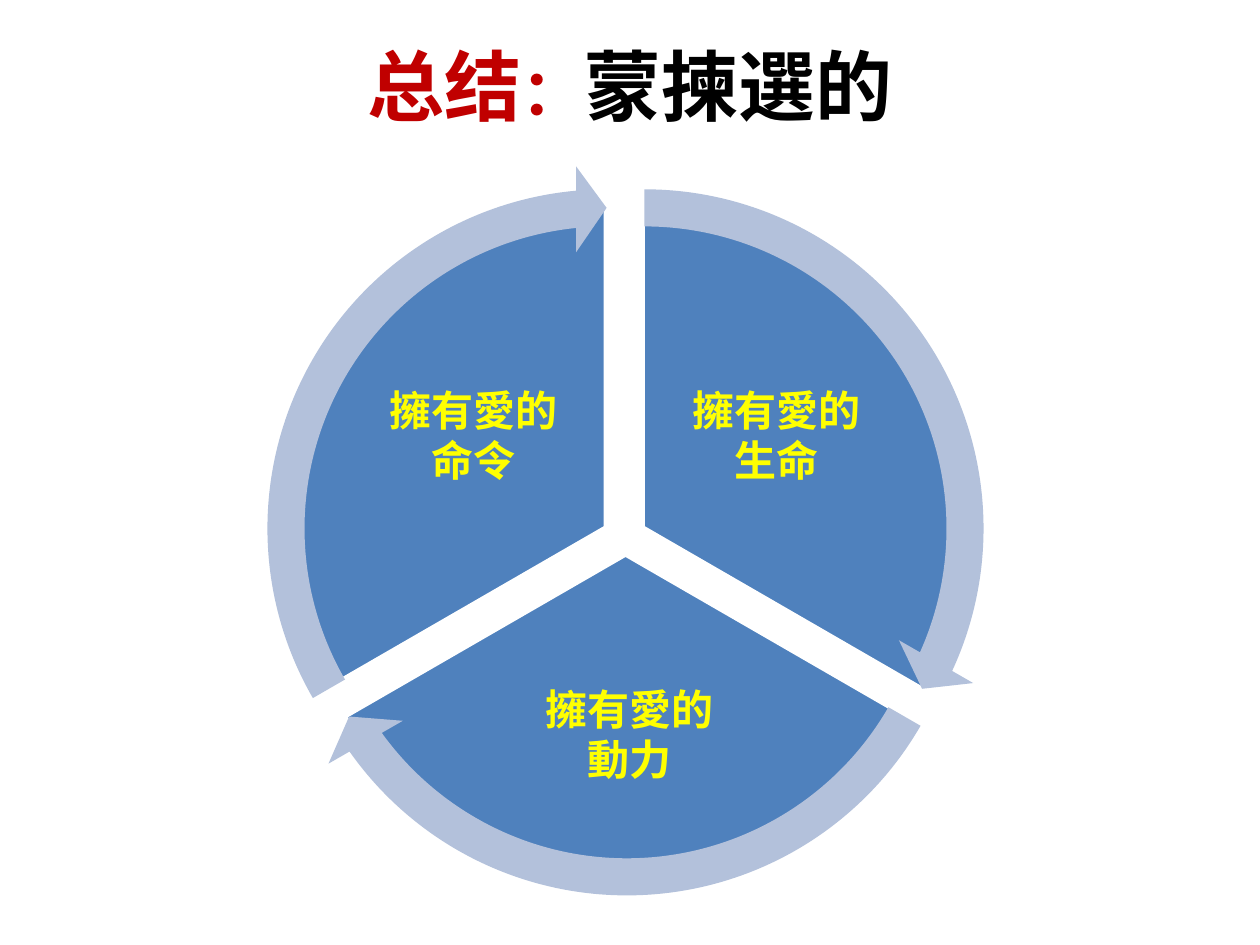
from dataclasses import dataclass

import pptx
import pptx.dml.color
import pptx.enum.shapes
import pptx.enum.text
import pptx.oxml.ns
import pptx.util
from pptx.util import Inches

FONT = "Noto Sans CJK SC"
COLORS = {
    "title_lead": "C00000",
    "title": "000000",
    "sector": "4F81BD",
    "gap": "FFFFFF",
    "label": "FFFF00",
    "arrow": "B3C1DB",
}
SECTOR_SIZE = 5.13
ARROW_SIZE = 5.77
ARROW_OFFSET = 0.31
HEAD_ANGLE = 3.275
ARROW_WIDTH = 0.051
HEAD_WIDTH = 0.059


@dataclass
class Sector:
    left: float
    top: float
    start: float
    end: float
    label: tuple[float, float, float, float]
    lines: tuple[str, str]


SECTORS = [
    Sector(2.54, 1.62, 162, 18, (5.25, 2.71, 1.83, 1.53), ("擁有愛的", "生命")),
    Sector(2.40, 1.84, 18, 90, (3.62, 5.18, 2.75, 1.34), ("擁有愛的", "動力")),
    Sector(2.24, 1.62, 90, 162, (2.84, 2.71, 1.83, 1.53), ("擁有愛的", "命令")),
]


def color(name: str) -> pptx.dml.color.RGBColor:
    return pptx.dml.color.RGBColor.from_string(COLORS[name])


def style_font(font, size: float, color_name: str) -> None:
    font.name = FONT
    font.size = pptx.util.Pt(size)
    font.bold = True
    font.color.rgb = color(color_name)


def add_span(para, text: str) -> pptx.text.text._Run:
    span = para.add_run()
    span.text = text
    properties = span._r.get_or_add_rPr()
    east_asian = properties.makeelement(pptx.oxml.ns.qn("a:ea"), {"typeface": FONT})
    properties.append(east_asian)
    return span


def add_text_frame(page, bounds: tuple, margin: float):
    frame = page.shapes.add_textbox(*map(Inches, bounds)).text_frame
    frame.word_wrap = True
    frame.vertical_anchor = pptx.enum.text.MSO_ANCHOR.MIDDLE
    frame.margin_left = frame.margin_right = Inches(margin)
    frame.margin_top = frame.margin_bottom = Inches(margin)
    return frame


def add_title(page) -> None:
    para = add_text_frame(page, (0.5, 0.05, 9, 1.25), 0.05).paragraphs[0]
    para.alignment = pptx.enum.text.PP_ALIGN.CENTER
    for text, size, color_name in (
        ("总结", 44, "title_lead"),
        ("：", 36, "title_lead"),
        ("蒙揀選的", 44, "title"),
    ):
        style_font(add_span(para, text).font, size, color_name)


def add_ring_shape(page, kind, left: float, top: float, size: float,
                   adjustments: tuple, fill: str):
    shape = page.shapes.add_shape(
        kind, Inches(left), Inches(top), Inches(size), Inches(size))
    shape.shadow.inherit = False
    shape.fill.solid()
    shape.fill.fore_color.rgb = color(fill)
    shape.line.fill.background()
    for index, value in enumerate(adjustments):
        shape.adjustments[index] = value
    return shape


def add_sector(page, sector: Sector) -> None:
    pie = add_ring_shape(
        page, pptx.enum.shapes.MSO_SHAPE.PIE, sector.left, sector.top,
        SECTOR_SIZE, (sector.start, sector.end), "sector")
    pie.line.color.rgb = color("gap")
    pie.line.width = pptx.util.Pt(2)
    frame = add_text_frame(page, sector.label, 0.03)
    for index, line in enumerate(sector.lines):
        para = frame.add_paragraph() if index else frame.paragraphs[0]
        para.alignment = pptx.enum.text.PP_ALIGN.CENTER
        para.line_spacing = 0.9
        para.space_after = pptx.util.Pt(3)
        style_font(para.font, 24, "label")
        add_span(para, line)


def add_arrow(page, sector: Sector) -> None:
    add_ring_shape(
        page, pptx.enum.shapes.MSO_SHAPE.CIRCULAR_ARROW,
        sector.left - ARROW_OFFSET, sector.top - ARROW_OFFSET, ARROW_SIZE,
        (ARROW_WIDTH, HEAD_ANGLE, sector.end - HEAD_ANGLE, sector.start, HEAD_WIDTH),
        "arrow")


def main() -> None:
    """Build a title above a three-part cycle of sectors and arrows."""
    deck = pptx.Presentation()
    deck.slide_width, deck.slide_height = Inches(10), Inches(7.5)
    page = deck.slides.add_slide(deck.slide_layouts[6])
    add_title(page)
    for sector in SECTORS:
        add_sector(page, sector)
    for sector in SECTORS:
        add_arrow(page, sector)
    deck.save("out.pptx")


if __name__ == "__main__":
    main()
